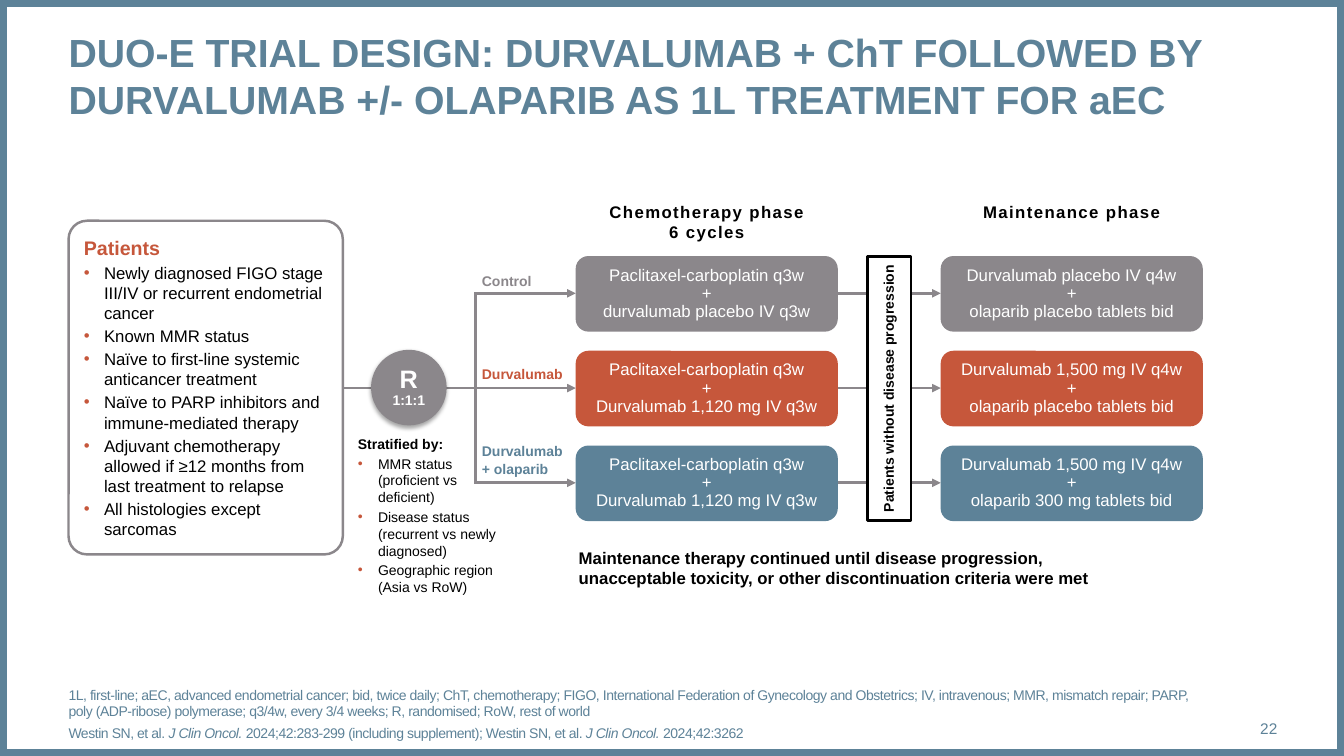
from dataclasses import dataclass
from lxml.etree import SubElement
from pptx import Presentation
from pptx.dml.color import RGBColor
from pptx.enum.shapes import MSO_CONNECTOR, MSO_SHAPE
from pptx.enum.text import MSO_ANCHOR, MSO_AUTO_SIZE, PP_ALIGN
from pptx.oxml.ns import qn
from pptx.util import Inches, Pt


@dataclass(frozen=True)
class Theme:
    font: str = "Arial"
    blue: str = "5D8298"
    red: str = "C6573B"
    gray: str = "8B878B"
    black: str = "000000"
    white: str = "FFFFFF"
    title: int = 28
    mark: int = 18
    head: int = 14
    body: int = 12
    page: int = 11
    small: int = 10


class Board:
    def __init__(self, slide, theme):
        self.slide = slide
        self.theme = theme

    def paint(self, shape, fill, line, width):
        if fill:
            shape.fill.solid()
            shape.fill.fore_color.rgb = RGBColor.from_string(fill)
        else:
            shape.fill.background()
        if line:
            shape.line.color.rgb = RGBColor.from_string(line)
            shape.line.width = Pt(width)
        else:
            shape.line.fill.background()

    def setup(self, frame, inset=(0, 0), anchor=MSO_ANCHOR.TOP):
        frame.word_wrap = True
        frame.auto_size = MSO_AUTO_SIZE.NONE
        frame.vertical_anchor = anchor
        frame.margin_left = frame.margin_right = Inches(inset[0])
        frame.margin_top = frame.margin_bottom = Inches(inset[1])

    def rows(self, frame, rows, size, color, bold=False, align=PP_ALIGN.LEFT,
             after=0, before=0, lead=1.0, track=0, bullet=False, more=False):
        for i, row in enumerate(rows):
            first = i == 0 and not more
            para = frame.paragraphs[0] if first else frame.add_paragraph()
            para.alignment = align
            para.line_spacing = lead
            para.space_after = Pt(after)
            para.space_before = Pt(0 if first else before)
            if bullet:
                self.bullet(para)
            parts = [(row, False)] if isinstance(row, str) else row
            for text, slant in parts:
                run = para.add_run()
                run.text = text
                if slant:
                    run.font.italic = True
                if track:
                    run._r.get_or_add_rPr().set("spc", str(round(track * 100)))
            para.font.name = self.theme.font
            para.font.size = Pt(size)
            para.font.bold = bold
            para.font.color.rgb = RGBColor.from_string(color)

    def bullet(self, para):
        props = para._p.get_or_add_pPr()
        props.set("marL", str(Inches(0.2)))
        props.set("indent", str(-Inches(0.2)))
        tint = SubElement(props, qn("a:buClr"))
        SubElement(tint, qn("a:srgbClr"), val=self.theme.red)
        SubElement(props, qn("a:buFont"), typeface=self.theme.font)
        SubElement(props, qn("a:buChar"), char="•")

    def title(self, text, *box):
        shape = self.slide.shapes.title
        shape.left, shape.top, shape.width, shape.height = map(Inches, box)
        self.setup(shape.text_frame)
        self.rows(shape.text_frame, [text], self.theme.title, self.theme.blue, True)

    def text(self, box, rows, size, color, anchor=MSO_ANCHOR.TOP, **style):
        frame = self.slide.shapes.add_textbox(*map(Inches, box)).text_frame
        self.setup(frame, anchor=anchor)
        self.rows(frame, rows, size, color, **style)
        return frame

    def shape(self, kind, box, fill=None, line=None, width=1.75, round=None,
              inset=(0.04, 0.05)):
        shape = self.slide.shapes.add_shape(kind, *map(Inches, box))
        shape.shadow.inherit = False
        self.paint(shape, fill, line, width)
        if round is not None:
            shape.adjustments[0] = round
        self.setup(shape.text_frame, inset, MSO_ANCHOR.MIDDLE)
        return shape

    def shade(self, shape):
        effects = shape._element.spPr.find(qn("a:effectLst"))
        shadow = SubElement(effects, qn("a:outerShdw"), blurRad=str(Pt(3.1)),
                            dist=str(Pt(1.8)), dir="5400000")
        tint = SubElement(shadow, qn("a:srgbClr"), val=self.theme.black)
        SubElement(tint, qn("a:alpha"), val="35000")

    def line(self, x1, y1, x2, y2, arrow=True):
        link = self.slide.shapes.add_connector(
            MSO_CONNECTOR.STRAIGHT, *map(Inches, (x1, y1, x2, y2)))
        link.line.color.rgb = RGBColor.from_string(self.theme.gray)
        link.line.width = Pt(2)
        props = link._element.spPr
        if arrow:
            SubElement(props.find(qn("a:ln")), qn("a:tailEnd"), type="triangle")
        SubElement(props, qn("a:effectLst"))

    def card(self, x, y, rows, fill):
        card = self.shape(MSO_SHAPE.ROUNDED_RECTANGLE, (x, y, 2.6, 0.75), fill, round=0.169)
        self.rows(card.text_frame, rows, self.theme.body, self.theme.white,
                  align=PP_ALIGN.CENTER, lead=0.9)


def main():
    deck = Presentation()
    deck.slide_width, deck.slide_height = Inches(13.33), Inches(7.5)
    look = Theme()
    board = Board(deck.slides.add_slide(deck.slide_layouts[5]), look)
    mid = PP_ALIGN.CENTER

    board.shape(MSO_SHAPE.RECTANGLE, (0, 0, 13.33, 7.5), line=look.blue, width=10)
    board.title("DUO-E TRIAL DESIGN: DURVALUMAB + ChT FOLLOWED BY DURVALUMAB +/- "
                "OLAPARIB AS 1L TREATMENT FOR aEC", 0.68, 0.28, 11.99, 0.94)

    chemo, upkeep, top, step, fork = 5.71, 9.33, 2.54, 0.94, 4.72
    taxel = "Paclitaxel-carboplatin q3w"
    dose = "Durvalumab 1,120 mg IV q3w"
    arms = [
        (look.gray, ["Control"], 2.7, "durvalumab placebo IV q3w",
         "Durvalumab placebo IV q4w", "olaparib placebo tablets bid"),
        (look.red, ["Durvalumab"], 3.63, dose,
         "Durvalumab 1,500 mg IV q4w", "olaparib placebo tablets bid"),
        (look.blue, ["Durvalumab", "+ olaparib"], 4.41, dose,
         "Durvalumab 1,500 mg IV q4w", "olaparib 300 mg tablets bid"),
    ]
    axis = [top + 0.37 + step * i for i in range(len(arms))]
    board.line(fork, axis[0] - 0.01, fork, axis[-1] + 0.01, arrow=False)
    for i, (color, label, high, first, second, third) in enumerate(arms):
        board.line(2.34 if i == 1 else fork, axis[i], chemo, axis[i])
        board.line(7.38, axis[i], upkeep, axis[i])
        board.card(chemo, top + step * i, [taxel, "+", first], color)
        board.card(upkeep, top + step * i, [second, "+", third], color)
        board.text((4.78, high, 0.88, 0.17 * len(label)), label, look.small, color,
                   bold=True, after=2, lead=0.9 if len(label) > 1 else 1.0)

    for x, rows in ((chemo, ["Chemotherapy phase", "6 cycles"]),
                    (upkeep, ["Maintenance phase"])):
        board.text((x, 2, 2.6, 0.2 * len(rows)), rows, look.body, look.black,
                   bold=True, align=mid, track=1)

    group = board.shape(MSO_SHAPE.ROUNDED_RECTANGLE, (0.68, 2.19, 2.72, 3.31),
                        look.white, look.gray, round=0.067, inset=(0.1, 0.05)).text_frame
    board.rows(group, ["Patients"], look.head, look.red, True, after=2)
    board.rows(group, [
        "Newly diagnosed FIGO stage III/IV or recurrent endometrial cancer",
        "Known MMR status",
        "Naïve to first-line systemic anticancer treatment",
        "Naïve to PARP inhibitors and immune-mediated therapy",
        "Adjuvant chemotherapy allowed if ≥12 months from last treatment to relapse",
        "All histologies except sarcomas",
    ], look.body, look.black, after=2, bullet=True, more=True)

    node = board.shape(MSO_SHAPE.OVAL, (3.68, 3.47, 0.75, 0.75), look.gray, inset=(0, 0.05))
    board.shade(node)
    board.rows(node.text_frame, ["R"], look.mark, look.white, True, mid, lead=0.9)
    board.rows(node.text_frame, ["1:1:1"], look.small, look.white, True, mid,
               lead=0.9, more=True)

    strata = board.text((3.55, 4.32, 1.4, 1.6), ["Stratified by:"], look.small,
                        look.black, bold=True, after=2)
    board.rows(strata, [
        "MMR status (proficient vs deficient)",
        "Disease status (recurrent vs newly diagnosed)",
        "Geographic region (Asia vs RoW)",
    ], look.small, look.black, after=2, bullet=True, more=True)

    gate = board.shape(MSO_SHAPE.ROUNDED_RECTANGLE, (7.51, 3.64, 2.62, 0.43),
                       look.white, look.black, round=0)
    gate.rotation = 270
    board.rows(gate.text_frame, ["Patients without disease progression"], look.small,
               look.black, True, mid, lead=0.9)

    board.text((5.74, 5.43, 5.1, 0.4), [
        "Maintenance therapy continued until disease progression, unacceptable "
        "toxicity, or other discontinuation criteria were met",
    ], look.body, look.black, bold=True, after=2)
    board.text((0.68, 6.95, 11.13, 0.4), [
        "1L, first-line; aEC, advanced endometrial cancer; bid, twice daily; ChT, "
        "chemotherapy; FIGO, International Federation of Gynecology and Obstetrics; "
        "IV, intravenous; MMR, mismatch repair; PARP, poly (ADP-ribose) polymerase; "
        "q3/4w, every 3/4 weeks; R, randomised; RoW, rest of world",
        [("Westin SN, et al.", False), (" J Clin Oncol.", True),
         (" 2024;42:283-299 (including supplement); Westin SN, et al. ", False),
         ("J Clin Oncol. ", True), ("2024;42:3262", False)],
    ], look.small, look.blue, MSO_ANCHOR.BOTTOM, before=3, track=-0.3)
    board.text((11.81, 7.03, 0.86, 0.4), ["22"], look.page, look.blue,
               MSO_ANCHOR.MIDDLE, align=PP_ALIGN.RIGHT)
    deck.save("out.pptx")


if __name__ == "__main__":
    main()
